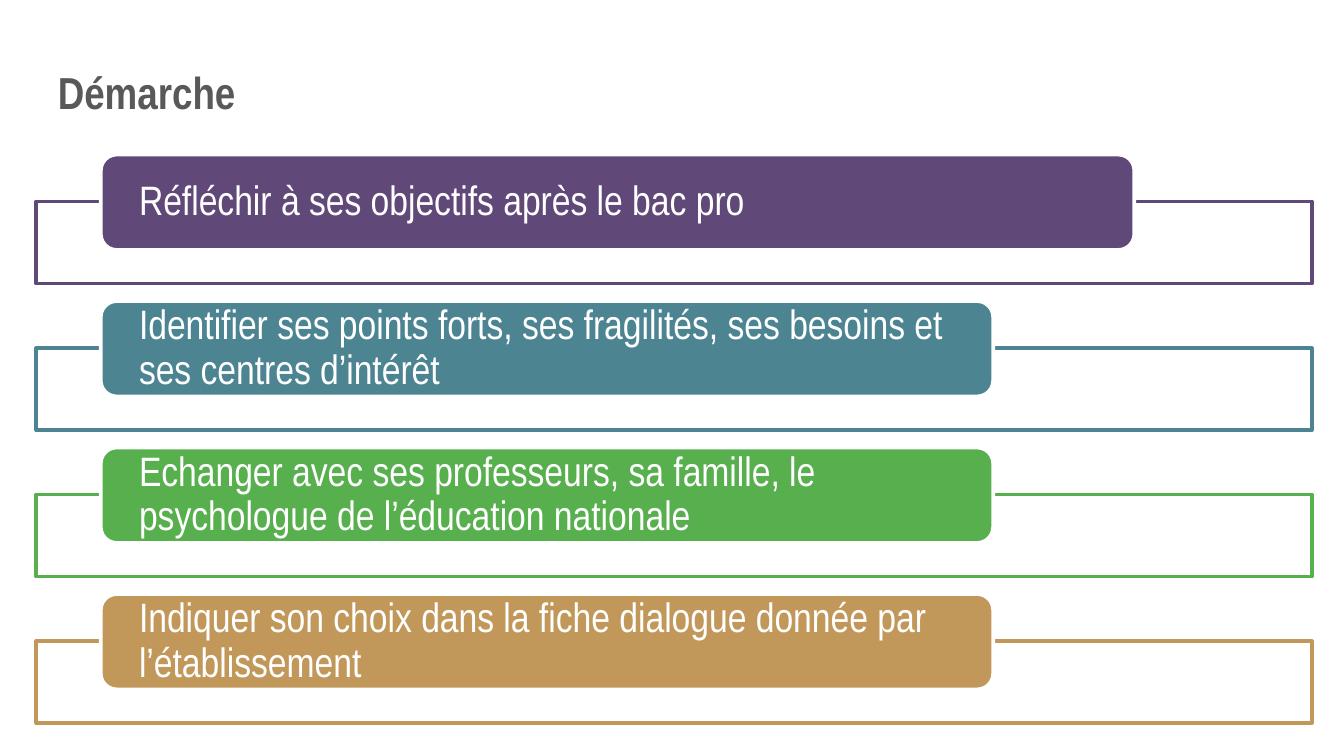
from dataclasses import dataclass

from lxml import etree
from pptx import Presentation
from pptx.dml.color import RGBColor
from pptx.enum.shapes import MSO_SHAPE
from pptx.enum.text import MSO_ANCHOR, PP_ALIGN
from pptx.oxml.ns import qn
from pptx.util import Inches, Pt

RECTANGLE = MSO_SHAPE.RECTANGLE
ROUNDED = MSO_SHAPE.ROUNDED_RECTANGLE
TOP = MSO_ANCHOR.TOP
MIDDLE = MSO_ANCHOR.MIDDLE
LEFT = PP_ALIGN.LEFT


@dataclass(frozen=True)
class Theme:
    font: str = "Arial Narrow"
    title_size: int = 24
    step_size: int = 22
    line_width: int = 2
    frame_opacity: int = 90
    title_color: str = "595959"
    white: str = "FFFFFF"


THEME = Theme()

STEPS = [
    ("Réfléchir à ses objectifs après le bac pro", "604878", 7.69),
    ("Identifier ses points forts, ses fragilités, ses besoins et ses centres d’intérêt", "4C8492", 6.64),
    ("Echanger avec ses professeurs, sa famille, le psychologue de l’éducation nationale", "57AF4D", 6.64),
    ("Indiquer son choix dans la fiche dialogue donnée par l’établissement", "C19859", 6.64),
]
FIRST_TOP = 1.15
STEP_PITCH = 1.09
FRAME_OFFSET = 0.35


def write_text(holder, text, size, color, bold=False, anchor=TOP, side_inset=0):
    frame = holder.text_frame
    frame.text = text
    frame.word_wrap = True
    frame.vertical_anchor = anchor
    frame.margin_left = frame.margin_right = Inches(side_inset)
    frame.margin_top = frame.margin_bottom = 0
    paragraph = frame.paragraphs[0]
    paragraph.alignment = LEFT
    paragraph.line_spacing = 0.9
    font = paragraph.runs[0].font
    font.name = THEME.font
    font.size = Pt(size)
    font.bold = bold
    font.color.rgb = RGBColor.from_string(color)


def add_box(slide, preset, left, top, width, height, fill, line):
    box = slide.shapes.add_shape(preset, Inches(left), Inches(top), Inches(width), Inches(height))
    box.shadow.inherit = False
    box.fill.solid()
    box.fill.fore_color.rgb = RGBColor.from_string(fill)
    box.line.color.rgb = RGBColor.from_string(line)
    box.line.width = Pt(THEME.line_width)
    return box


def set_opacity(box, percent):
    fill_color = box.element.spPr.find(qn("a:solidFill")).find(qn("a:srgbClr"))
    etree.SubElement(fill_color, qn("a:alpha"), val=str(percent * 1000))


def add_title(slide, text):
    title = slide.shapes.add_textbox(Inches(0.43), Inches(0.53), Inches(9.49), Inches(0.39))
    write_text(title, text, THEME.title_size, THEME.title_color, bold=True)


def add_step(slide, top, text, color, width):
    frame = add_box(slide, RECTANGLE, 0.27, top + FRAME_OFFSET, 9.49, 0.61, THEME.white, color)
    set_opacity(frame, THEME.frame_opacity)
    label = add_box(slide, ROUNDED, 0.75, top, width, 0.71, color, THEME.white)
    write_text(label, text, THEME.step_size, THEME.white, anchor=MIDDLE, side_inset=0.25)


def main():
    prs = Presentation()
    prs.slide_width = Inches(10)
    prs.slide_height = prs.slide_width * 9 // 16
    slide = prs.slides.add_slide(prs.slide_layouts[6])
    add_title(slide, "Démarche")
    for index, (text, color, width) in enumerate(STEPS):
        add_step(slide, FIRST_TOP + index * STEP_PITCH, text, color, width)
    prs.save("out.pptx")


if __name__ == "__main__":
    main()
